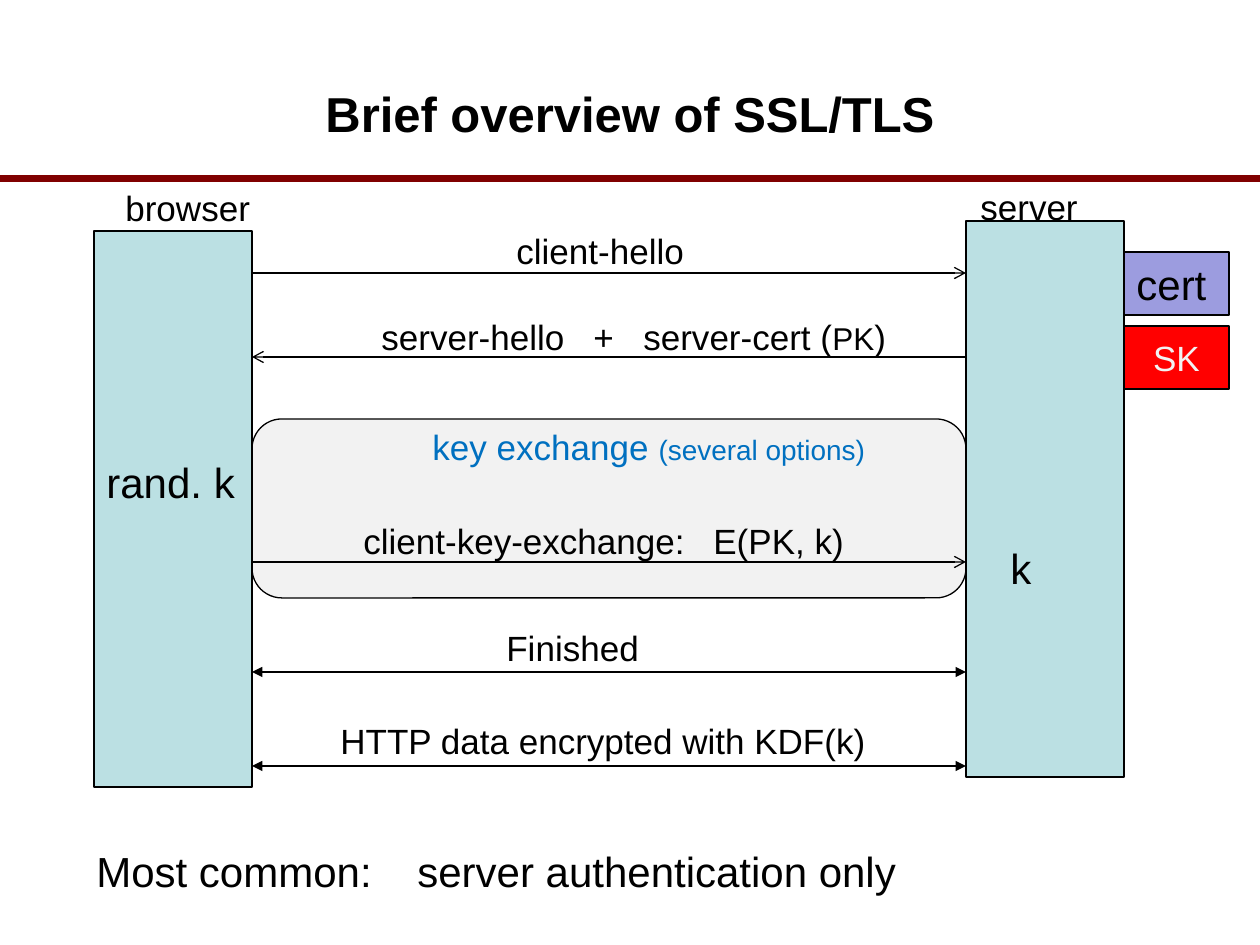
from dataclasses import dataclass

from lxml.etree import SubElement
from pptx import Presentation
from pptx.dml.color import RGBColor as RGB
from pptx.enum.shapes import MSO_CONNECTOR as Line, MSO_SHAPE as Shape
from pptx.enum.text import MSO_ANCHOR as Anchor, PP_ALIGN as Align
from pptx.oxml.ns import qn
from pptx.util import Emu, Pt

SCALE = 914400 // 126


@dataclass(frozen=True)
class Theme:
    font: str = "Arial"
    ink: str = "000000"
    rule: str = "800000"
    pillar: str = "BBE0E3"
    panel: str = "F2F2F2"
    accent: str = "0070C0"
    cert: str = "9C9CDF"
    secret: str = "FF0000"
    light: str = "F2F2F2"
    title: int = 28
    big: int = 24
    body: int = 20
    small: int = 18
    note: int = 16
    thin: float = 0.75
    thick: float = 4


T = Theme()


def px(*vals):
    return [Emu(v * SCALE) for v in vals]


def write(shape, text, size=T.body, color=T.ink, bold=False,
          align=Align.LEFT, anchor=Anchor.TOP, tabs=()):
    """Fill a shape with text: a string, or a list of (string, size) runs."""
    frame = shape.text_frame
    frame.word_wrap = bool(tabs)
    frame.vertical_anchor = anchor
    para = frame.paragraphs[0]
    para.alignment = align
    for part, pts in [(text, size)] if isinstance(text, str) else text:
        run = para.add_run()
        run.text = part
        font = run.font
        font.name, font.size, font.bold = T.font, Pt(pts), bold
        font.color.rgb = RGB.from_string(color)
    if tabs:
        stops = SubElement(para._p.get_or_add_pPr(), qn("a:tabLst"))
        for pos in px(*tabs):
            SubElement(stops, qn("a:tab"), pos=str(pos), algn="l")


def label(slide, box, text, **style):
    write(slide.shapes.add_textbox(*px(*box)), text, **style)


def block(slide, box, fill, kind=Shape.RECTANGLE):
    shape = slide.shapes.add_shape(kind, *px(*box))
    shape.shadow.inherit = False
    shape.fill.solid()
    shape.fill.fore_color.rgb = RGB.from_string(fill)
    shape.line.color.rgb = RGB.from_string(T.ink)
    shape.line.width = Pt(T.thin)
    return shape


def stroke(slide, ends, color=T.ink, width=T.thin, head=None, tail=None):
    line = slide.shapes.add_connector(Line.STRAIGHT, *px(*ends))
    line.line.color.rgb = RGB.from_string(color)
    line.line.width = Pt(width)
    pen = line.line._get_or_add_ln()
    for tag, kind in (("a:headEnd", head), ("a:tailEnd", tail)):
        if kind:
            SubElement(pen, qn(tag), type=kind)
    SubElement(line._element.spPr, qn("a:effectLst"))


def header(slide, box):
    x, y, w, h = box
    stroke(slide, (x, y + h, x + w, y + h), T.rule, T.thick)
    label(slide, (x + 94, y + 34, w - 188, 157), "Brief overview of SSL/TLS",
          size=T.title, bold=True, align=Align.CENTER, anchor=Anchor.MIDDLE)


def browser(slide, box):
    x, y, w, h = box
    block(slide, box, T.pillar)
    label(slide, (x + 19, y - 51, 151, 55), "browser")
    label(slide, (x, y + 219, w, 63), "rand. k", size=T.big)


def server(slide, box):
    x, y, w, h = box
    block(slide, box, T.pillar)
    label(slide, (x + 2, y - 42, 123, 55), "server")
    label(slide, (x + 32, y + 315, 47, 63), "k", size=T.big)
    cert = block(slide, (x + w, y + 31, 105, 63), T.cert)
    write(cert, "cert", size=T.big)
    key = block(slide, (x + w, y + 105, 105, 63), T.secret)
    write(key, "SK", color=T.light, align=Align.CENTER, anchor=Anchor.MIDDLE)


def panel(slide, box):
    x, y, w, h = box
    block(slide, box, T.panel, Shape.ROUNDED_RECTANGLE)
    label(slide, (x + 168, y, 462, 55),
          [("key exchange ", T.body), ("(several options)", T.note)],
          color=T.accent)


def messages(slide, box):
    """Draw the arrows of the handshake, each with its label just above."""
    x, y, w, h = box
    out = dict(tail="arrow")
    back = dict(head="arrow")
    both = dict(head="triangle", tail="triangle")
    hello = [("server-hello\t+\tserver-cert (", T.body),
             ("PK", T.small), (")", T.body)]
    rows = [
        (0, out, 252, 50, 194, "client-hello", ()),
        (84, back, 117, 48, 550, hello, (212, 262)),
        (289, out, 99, 49, 530, "client-key-exchange:\tE(PK, k)", (350,)),
        (399, both, 242, 52, 159, "Finished", ()),
        (493, both, 76, 53, 554, "HTTP data encrypted with KDF(k)", ()),
    ]
    for drop, heads, left, rise, wide, text, tabs in rows:
        level = y + drop
        stroke(slide, (x, level, x + w, level), **heads)
        label(slide, (x + left, level - rise, wide, 55), text, tabs=tabs)


def footer(slide, box):
    label(slide, box, "Most common:\tserver authentication only",
          size=T.big, tabs=(321,))


def main():
    deck = Presentation()
    deck.slide_width, deck.slide_height = px(1260, 945)
    slide = deck.slides.add_slide(deck.slide_layouts[6])
    header(slide, (0, 0, 1260, 179))
    panel(slide, (252, 419, 714, 179))
    browser(slide, (94, 231, 158, 556))
    server(slide, (966, 221, 158, 556))
    messages(slide, (252, 273, 714, 493))
    footer(slide, (84, 839, 860, 63))
    deck.save("out.pptx")


if __name__ == "__main__":
    main()
